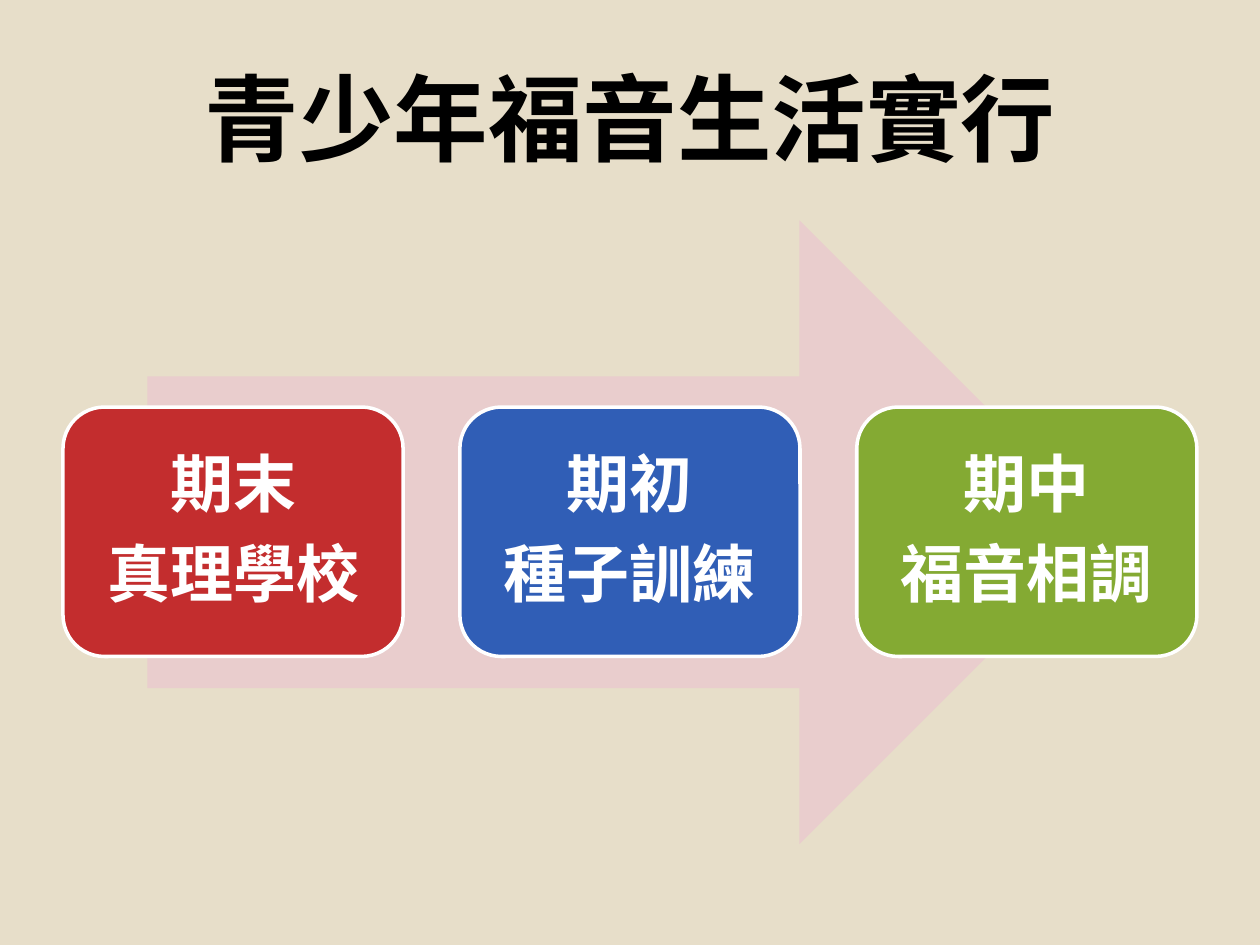
from lxml import etree
from pptx import Presentation
from pptx.dml.color import RGBColor
from pptx.enum.shapes import MSO_SHAPE
from pptx.enum.text import MSO_ANCHOR, PP_ALIGN
from pptx.oxml.ns import qn
from pptx.util import Inches, Pt

ARROW = MSO_SHAPE.RIGHT_ARROW
CARD = MSO_SHAPE.ROUNDED_RECTANGLE
MIDDLE = MSO_ANCHOR.MIDDLE
CENTER = PP_ALIGN.CENTER

COLORS = {
    "sand": "E7DEC9", "pink": "E9CDCD", "red": "C32D2E", "blue": "305EB6",
    "green": "84AA33", "white": "FFFFFF", "black": "000000",
}
WIDTH, HEIGHT = 10, 7.5
STEPS = [
    ("red", ["期末", "真理學校"]),
    ("blue", ["期初", "種子訓練"]),
    ("green", ["期中", "福音相調"]),
]
# Percent of the slide's width
EDGE, CARD_W = 5, 27
PITCH = (100 - 2 * EDGE - CARD_W) / (len(STEPS) - 1)


def color(name):
    return RGBColor.from_string(COLORS[name])


def place(left, top, width, height):
    """Turn percent of the slide's size into lengths."""
    across, down = WIDTH / 100, HEIGHT / 100
    return (Inches(left * across), Inches(top * down),
            Inches(width * across), Inches(height * down))


class Deck:
    font = "Noto Sans CJK SC"

    def __init__(self):
        self.prs = Presentation()
        self.prs.slide_width = Inches(WIDTH)
        self.prs.slide_height = Inches(HEIGHT)
        self.slide = self.prs.slides.add_slide(self.prs.slide_layouts[6])
        back = self.slide.background.fill
        back.solid()
        back.fore_color.rgb = color("sand")

    def text(self, frame, lines, size, ink, inset, after=None):
        """Fill a frame with centred bold lines; after is a share of a line."""
        frame.word_wrap = True
        frame.vertical_anchor = MIDDLE
        frame.margin_left = frame.margin_right = Inches(inset)
        frame.margin_top = frame.margin_bottom = Inches(inset)
        for i, line in enumerate(lines):
            para = frame.add_paragraph() if i else frame.paragraphs[0]
            para.alignment = CENTER
            if after:
                para.line_spacing = 0.9
                para.space_after = Pt(0)
                gap = para._p.pPr.find(qn("a:spcAft"))
                gap.remove(gap[0])
                etree.SubElement(gap, qn("a:spcPct"), val=str(round(after * 100000)))
            run = para.add_run()
            run.text = line
            run.font.size = Pt(size)
            run.font.bold = True
            run.font.name = self.font
            run.font.color.rgb = color(ink)
            etree.SubElement(run._r.rPr, qn("a:ea"), typeface=self.font)

    def title(self, words, *box):
        area = self.slide.shapes.add_textbox(*place(*box))
        self.text(area.text_frame, [words], 54, "black", 0.05)

    def shape(self, kind, fill, *box, line=None):
        item = self.slide.shapes.add_shape(kind, *place(*box))
        item.shadow.inherit = False
        item.fill.solid()
        item.fill.fore_color.rgb = color(fill)
        if line:
            item.line.color.rgb = color(line)
            item.line.width = Pt(2)
        else:
            item.line.fill.background()
        return item

    def card(self, fill, lines, *box):
        item = self.shape(CARD, fill, *box, line="white")
        self.text(item.text_frame, lines, 36, "white", 0.15, after=0.35)


def main():
    deck = Deck()
    deck.title("青少年福音生活實行", EDGE, 4, 100 - 2 * EDGE, 16.67)
    deck.shape(ARROW, "pink", 11.7, 23.33, 76.5, 66)
    for i, (fill, lines) in enumerate(STEPS):
        deck.card(fill, lines, EDGE + i * PITCH, 43.07, CARD_W, 26.4)
    deck.prs.save("out.pptx")


if __name__ == "__main__":
    main()
